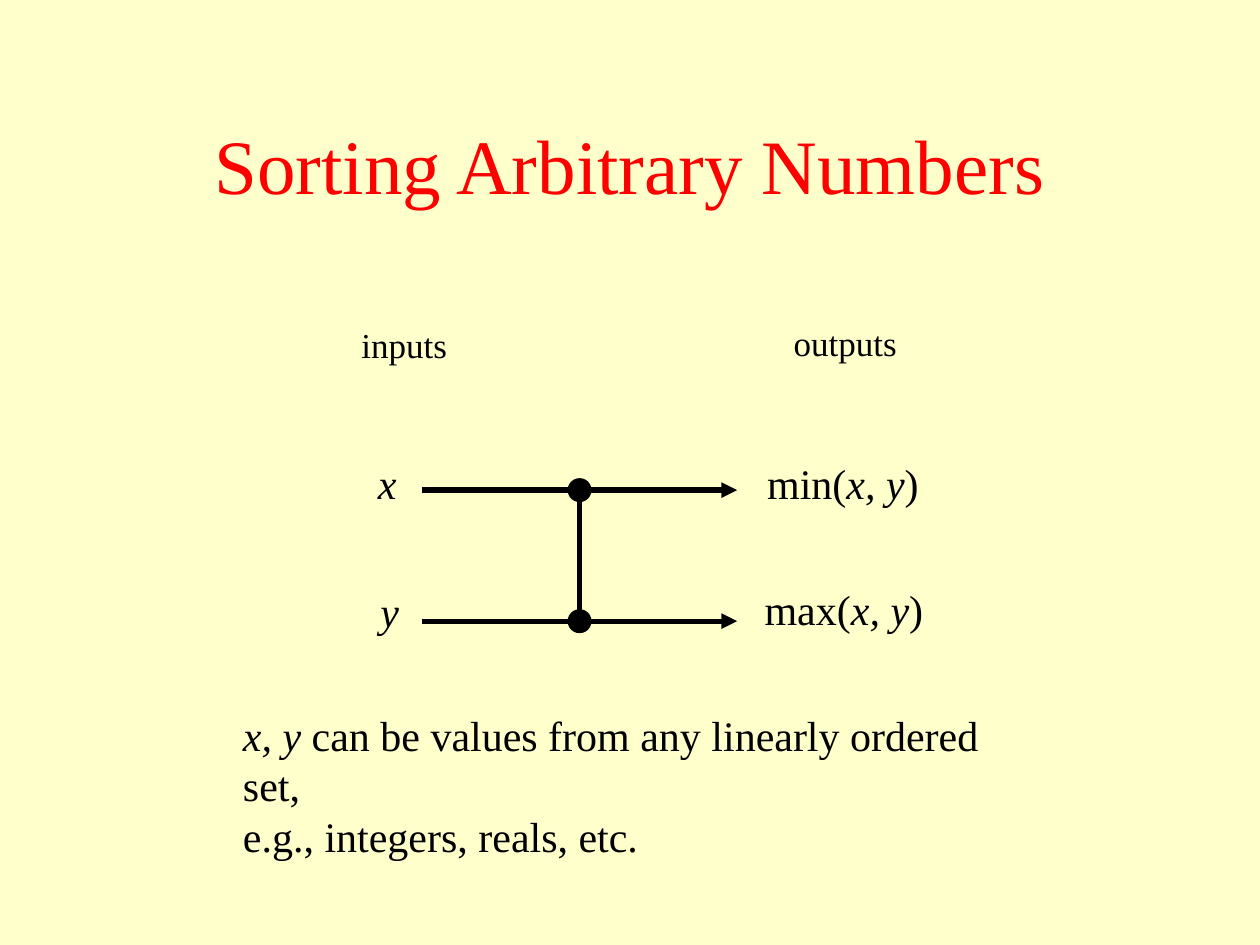
from lxml.etree import SubElement
from pptx import Presentation
from pptx.dml.color import RGBColor
from pptx.enum.shapes import MSO_CONNECTOR, MSO_SHAPE
from pptx.enum.text import MSO_ANCHOR, PP_ALIGN
from pptx.oxml.ns import qn
from pptx.util import Inches, Pt

COLORS = {"background": "FFFFCC", "title": "FF0000", "ink": "000000"}
FONT = "Times New Roman"
WIRE_START, WIRE_END, COMPARATOR_X = 3.35, 5.85, 4.6
WIRE_ROWS = (3.89, 4.93)
DOT_SIZE = 0.18

# left, top, width, height, point size, runs as (text, italic)
LABELS = [
    (2.77, 2.52, 0.88, 0.43, 20, [("inputs", False)]),
    (6.2, 2.5, 1.02, 0.43, 20, [("outputs", False)]),
    (2.9, 3.58, 0.35, 0.5, 24, [("x", True)]),
    (2.92, 4.6, 0.35, 0.5, 24, [("y", True)]),
    (5.99, 3.58, 1.4, 0.5, 24, [("min(", False), ("x, y", True), (")", False)]),
    (5.97, 4.58, 1.46, 0.5, 24, [("max(", False), ("x, y", True), (")", False)]),
]
NOTE = [
    [("x, y", True), (" can be values from any linearly ordered set,", False)],
    [("e.g., integers, reals, etc.", False)],
]


def color(name):
    return RGBColor.from_string(COLORS[name])


def add_text(slide, box, paragraphs, size, ink="ink", wrap=False,
             align=PP_ALIGN.LEFT, anchor=MSO_ANCHOR.TOP):
    """Add a text box; each paragraph is a list of (text, italic) runs."""
    frame = slide.shapes.add_textbox(*map(Inches, box)).text_frame
    frame.word_wrap = wrap
    frame.vertical_anchor = anchor
    for index, runs in enumerate(paragraphs):
        paragraph = frame.add_paragraph() if index else frame.paragraphs[0]
        paragraph.alignment = align
        for text, italic in runs:
            run = paragraph.add_run()
            run.text = text
            font_format = {"name": FONT, "size": Pt(size), "italic": italic}
            for attribute, value in font_format.items():
                setattr(run.font, attribute, value)
            run.font.color.rgb = color(ink)


def add_line(slide, start, end, arrow=False):
    connector = slide.shapes.add_connector(
        MSO_CONNECTOR.STRAIGHT, *map(Inches, start + end))
    connector.line.color.rgb = color("ink")
    connector.line.width = Pt(3)
    if arrow:
        SubElement(connector.line._get_or_add_ln(), qn("a:tailEnd"), type="triangle")
    SubElement(connector._element.spPr, qn("a:effectLst"))


def add_dot(slide, center_x, center_y):
    left, top = center_x - DOT_SIZE / 2, center_y - DOT_SIZE / 2
    dot = slide.shapes.add_shape(
        MSO_SHAPE.OVAL, *map(Inches, (left, top, DOT_SIZE, DOT_SIZE)))
    dot.shadow.inherit = False
    dot.fill.solid()
    dot.fill.fore_color.rgb = color("ink")
    dot.line.color.rgb = color("ink")
    dot.line.width = Pt(0.75)


def add_comparator(slide):
    """Add two wires joined by a vertical line with a dot at each end."""
    top, bottom = WIRE_ROWS
    add_line(slide, (COMPARATOR_X, top), (COMPARATOR_X, bottom))
    for row in WIRE_ROWS:
        add_dot(slide, COMPARATOR_X, row)
        add_line(slide, (WIRE_START, row), (WIRE_END, row), arrow=True)


def main():
    presentation = Presentation()
    presentation.slide_width = Inches(10)
    presentation.slide_height = Inches(7.5)
    slide = presentation.slides.add_slide(presentation.slide_layouts[6])
    slide.background.fill.solid()
    slide.background.fill.fore_color.rgb = color("background")

    add_text(slide, (0.75, 0.67, 8.5, 1.25), [[("Sorting Arbitrary Numbers", False)]],
             44, "title", wrap=True, align=PP_ALIGN.CENTER, anchor=MSO_ANCHOR.MIDDLE)
    add_text(slide, (1.83, 5.58, 6.57, 0.9), NOTE, 24, wrap=True)
    for *box, size, runs in LABELS:
        add_text(slide, box, [runs], size)
    add_comparator(slide)
    presentation.save("out.pptx")


if __name__ == "__main__":
    main()
